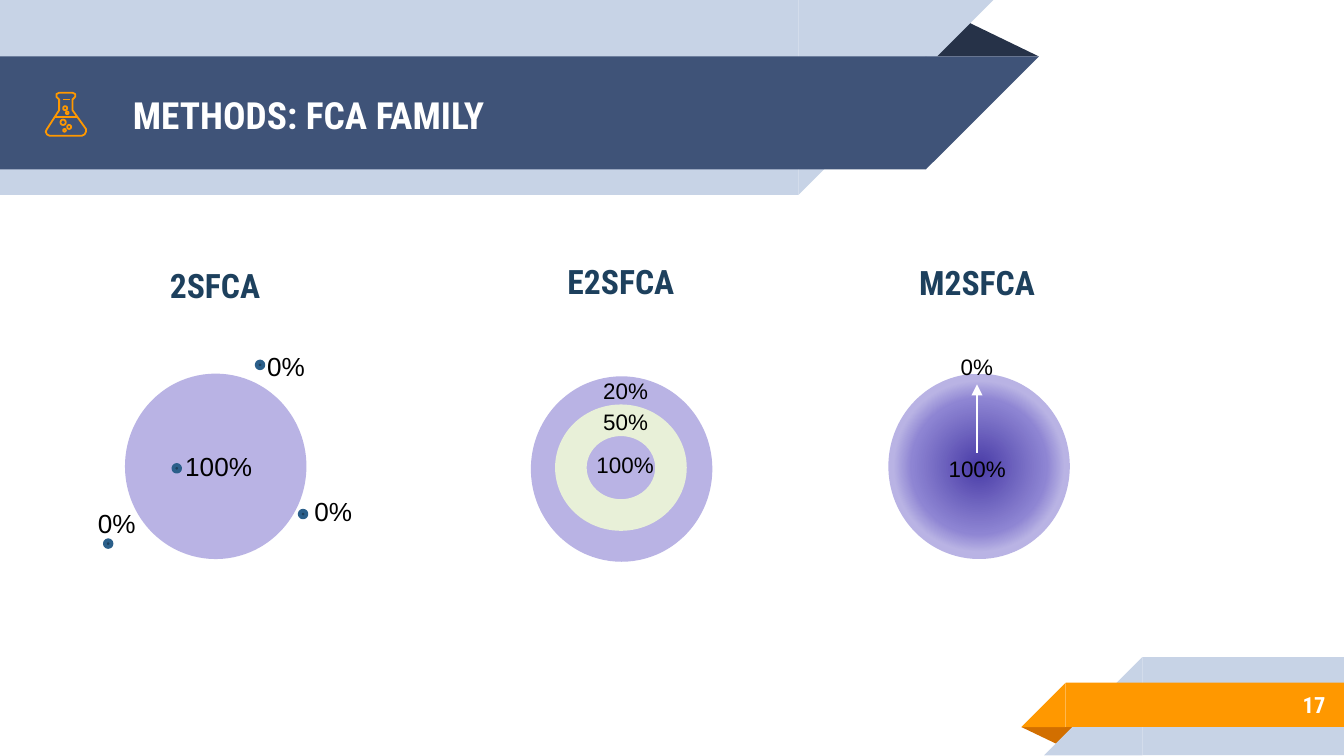
"""Build the "Methods: FCA family" slide comparing three catchment models."""
from dataclasses import dataclass

from lxml.etree import SubElement
from pptx import Presentation
from pptx.dml.color import RGBColor
from pptx.enum.shapes import MSO_CONNECTOR, MSO_SHAPE as Preset
from pptx.enum.text import MSO_ANCHOR as Anchor, MSO_AUTO_SIZE as AutoSize, PP_ALIGN as Align
from pptx.oxml import parse_xml
from pptx.oxml.ns import nsdecls, qn
from pptx.util import Inches, Pt


@dataclass(frozen=True)
class Theme:
    navy: str = "3F5378"
    shadow: str = "263248"
    pale: str = "C7D3E6"
    orange: str = "FF9800"
    rust: str = "D26F00"
    lilac: str = "B9B3E4"
    violet: str = "8E85D3"
    indigo: str = "493CA7"
    green: str = "E8F0D8"
    ink: str = "1D405D"
    ring: str = "2B5F8A"
    white: str = "FFFFFF"
    black: str = "000000"
    display: str = "Roboto Condensed"
    body: str = "Arial"
    title: int = 20
    heading: int = 18
    label: int = 14
    small: int = 12
    hairline: float = 0.96


theme = Theme()
deck = Presentation()
deck.slide_width = Inches(10)
deck.slide_height = deck.slide_width * 9 // 16
page = deck.slides.add_slide(deck.slide_layouts[6])


def draw(shape, fill=None, line=None, weight=1):
    shape.shadow.inherit = False
    if fill:
        shape.fill.solid()
        shape.fill.fore_color.rgb = RGBColor.from_string(fill)
    else:
        shape.fill.background()
    if line:
        shape.line.color.rgb = RGBColor.from_string(line)
        shape.line.width = Pt(weight)
    else:
        shape.line.fill.background()
    return shape


def write(place, text, size, color=theme.black, bold=False, align=Align.LEFT, banner=False):
    frame = page.shapes.add_textbox(*map(Inches, place)).text_frame
    settings = {"word_wrap": True, "auto_size": AutoSize.SHAPE_TO_FIT_TEXT}
    if banner:
        settings = {"word_wrap": True, "vertical_anchor": Anchor.MIDDLE,
                    "margin_top": Inches(0.1), "margin_bottom": Inches(0.1)}
    for name, value in settings.items():
        setattr(frame, name, value)
    para = frame.paragraphs[0]
    para.alignment = align
    span = para.add_run()
    span.text = text
    face = theme.display if bold else theme.body
    for name, value in {"name": face, "size": Pt(size), "bold": bold}.items():
        setattr(span.font, name, value)
    span.font.color.rgb = RGBColor.from_string(color)


ribbons = [
    (Preset.ISOSCELES_TRIANGLE, (6.88, 0.14, 0.85, 0.28), theme.shadow, 0, False),
    (Preset.RECTANGLE, (0, 0, 5.94, 1.45), theme.pale, 180, True),
    (Preset.RIGHT_TRIANGLE, (5.94, 0, 1.45, 1.45), theme.pale, 180, True),
    (Preset.RECTANGLE, (0, 0.42, 6.89, 0.84), theme.navy, 180, True),
    (Preset.RIGHT_TRIANGLE, (6.89, 0.42, 0.84, 0.84), theme.navy, 180, True),
    (Preset.ISOSCELES_TRIANGLE, (7.6, 5.41, 0.43, 0.14), theme.rust, 180, False),
    (Preset.RECTANGLE, (8.5, 4.89, 1.5, 0.73), theme.pale, 0, True),
    (Preset.RIGHT_TRIANGLE, (7.77, 4.89, 0.73, 0.73), theme.pale, 0, True),
    (Preset.RECTANGLE, (7.93, 5.08, 2.08, 0.33), theme.orange, 0, True),
    (Preset.RIGHT_TRIANGLE, (7.6, 5.08, 0.33, 0.33), theme.orange, 0, True),
]
for preset, place, color, turn, flipped in ribbons:
    ribbon = draw(page.shapes.add_shape(preset, *map(Inches, place)), color)
    ribbon.rotation = turn
    if flipped:
        ribbon._element.spPr.find(qn("a:xfrm")).set("flipH", "1")
    if preset == Preset.ISOSCELES_TRIANGLE:
        ribbon.adjustments[0] = 0.32

write((0.89, 0.43, 6.01, 0.84), "METHODS: FCA FAMILY", theme.title, theme.white, True, banner=True)
write((8.33, 5.07, 1.63, 0.35), "17", theme.small, theme.white, True, Align.RIGHT, banner=True)

flask = [(0.64, 0.96), (0.54, 0.82), (0.54, 0.74), (0.56, 0.72), (0.56, 0.7), (0.54, 0.69),
         (0.44, 0.69), (0.42, 0.7), (0.42, 0.72), (0.44, 0.74), (0.44, 0.82), (0.35, 0.96),
         (0.34, 0.98), (0.35, 1), (0.37, 1.01), (0.61, 1.01), (0.63, 1), (0.64, 0.98)]
corners = [(Inches(x), Inches(y)) for x, y in flask]
outline = page.shapes.build_freeform(*corners[0])
outline.add_line_segments(corners[1:], close=True)
draw(outline.convert_to_shape(), line=theme.orange, weight=theme.hairline)
for left, top, size in [(0.5, 0.93, 0.03), (0.45, 0.89, 0.04), (0.47, 0.96, 0.02),
                        (0.49, 0.83, 0.02), (0.47, 0.79, 0.03)]:
    bubble = page.shapes.add_shape(Preset.OVAL, *map(Inches, (left, top, size, size)))
    draw(bubble, line=theme.orange, weight=theme.hairline)

catchments = [("2SFCA", 0.93, 2.78, 1.02, 1.92), ("E2SFCA", 3.95, 2.8, 4.04, 1.89),
              ("M2SFCA", 6.61, 2.78, 6.69, 1.9)]
for name, left, top, heading_left, heading_top in catchments:
    circle = page.shapes.add_shape(Preset.OVAL, *map(Inches, (left, top, 1.35, 1.38)))
    draw(circle, theme.lilac)
    write((heading_left, heading_top, 1.16, 0.4), name, theme.heading, theme.ink, True, Align.CENTER)

stops = "".join(f'<a:gs pos="{share * 1000}"><a:srgbClr val="{color}"/></a:gs>'
                for share, color in [(0, theme.indigo), (52, theme.violet), (66, theme.lilac)])
gradient = parse_xml(
    f'<a:gradFill {nsdecls("a")} rotWithShape="1"><a:gsLst>{stops}</a:gsLst><a:path path="circle">'
    '<a:fillToRect l="50000" t="50000" r="50000" b="50000"/></a:path></a:gradFill>')
properties = circle._element.spPr
properties.replace(properties.find(qn("a:solidFill")), gradient)

draw(page.shapes.add_shape(Preset.DONUT, *map(Inches, (4.13, 3.01, 0.98, 0.94))), theme.green)
for left, top in [(1.91, 2.69), (1.29, 3.46), (0.78, 4.02), (2.23, 3.8)]:
    dot = page.shapes.add_shape(Preset.OVAL, *map(Inches, (left, top, 0.05, 0.05)))
    draw(dot, theme.ink, theme.ring, 2)

labels = {
    (theme.label, 0.34): [("100%", 1.28, 3.3), ("0%", 1.89, 2.56), ("0%", 2.24, 3.64),
                          ("0%", 0.63, 3.73)],
    (theme.small, 0.3): [("100%", 4.34, 3.31), ("50%", 4.39, 2.99), ("20%", 4.39, 2.76),
                         ("100%", 6.96, 3.34), ("0%", 7.05, 2.58)],
}
for (size, height), entries in labels.items():
    for text, left, top in entries:
        write((left, top, 0.77, height), text, size)

strokes = [((0.57, 0.87, 0.41, 0.87), theme.orange, theme.hairline, False),
           ((0.52, 0.74, 0.47, 0.74), theme.orange, theme.hairline, False),
           ((7.27, 3.37, 7.27, 2.86), theme.white, 1.25, True)]
for ends, color, weight, arrow in strokes:
    stroke = page.shapes.add_connector(MSO_CONNECTOR.STRAIGHT, *map(Inches, ends))
    stroke.line.color.rgb = RGBColor.from_string(color)
    stroke.line.width = Pt(weight)
    if arrow:
        SubElement(stroke.line._get_or_add_ln(), qn("a:tailEnd"), type="triangle")
    SubElement(stroke._element.spPr, qn("a:effectLst"))

deck.save("out.pptx")
